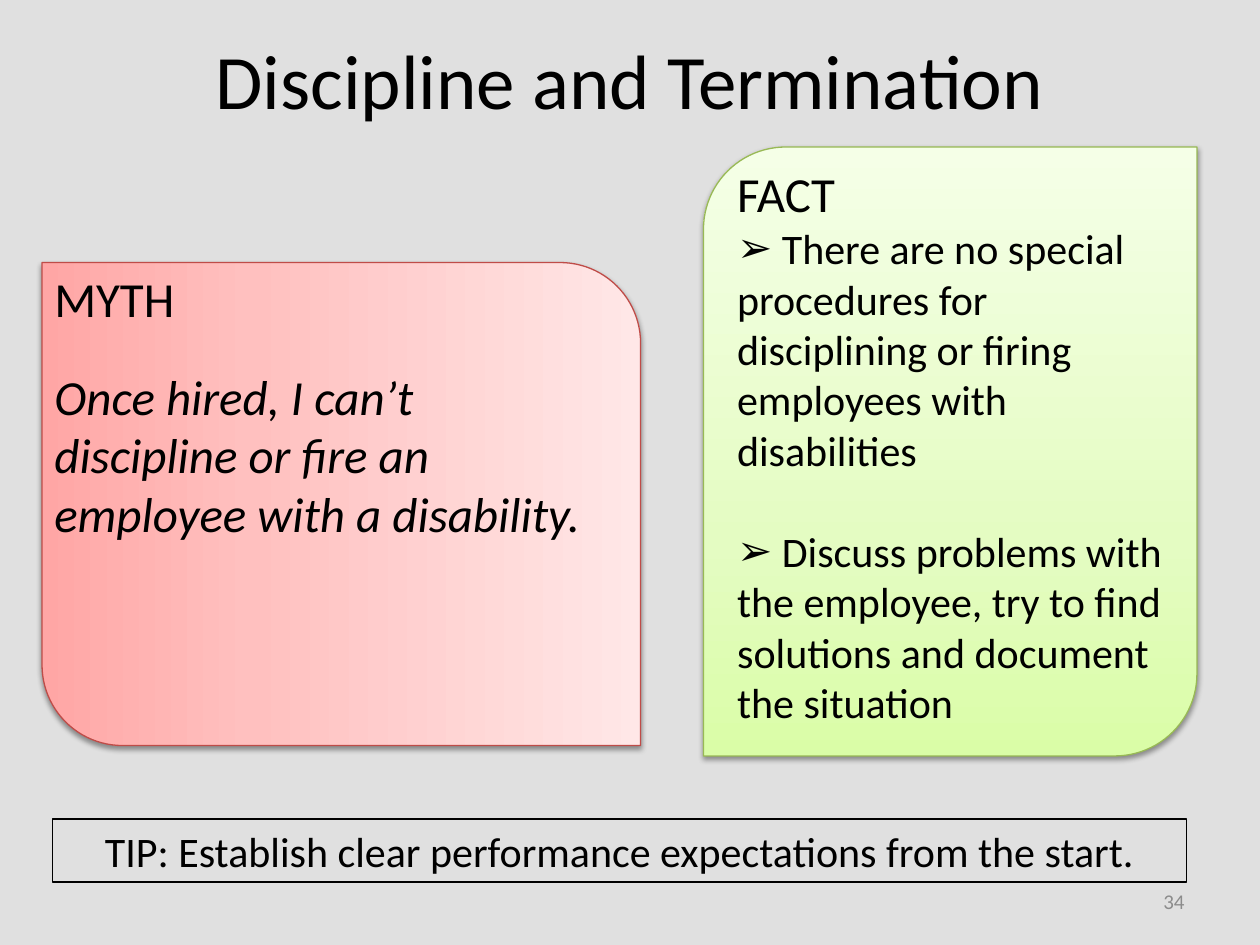
from lxml.etree import SubElement
from pptx import Presentation
from pptx.dml.color import RGBColor
from pptx.enum.shapes import MSO_SHAPE
from pptx.enum.text import MSO_ANCHOR, MSO_AUTO_SIZE, PP_ALIGN
from pptx.oxml.ns import qn
from pptx.util import Inches, Pt

LEAF = MSO_SHAPE.ROUND_2_DIAG_RECTANGLE
MID, TOP = MSO_ANCHOR.MIDDLE, MSO_ANCHOR.TOP
LEFT, CENTER, RIGHT = PP_ALIGN.LEFT, PP_ALIGN.CENTER, PP_ALIGN.RIGHT
FIXED = MSO_AUTO_SIZE.NONE
COLS, ROWS = 12, 9
FONT = "Calibri"


def color(code):
    """Turn a hex string into a colour."""
    return RGBColor.from_string(code)


class Deck:
    """Hold the style and the current slide, laid out on a 12 by 9 grid."""

    def __init__(self):
        """Open a deck with one title and body slide."""
        self.prs = Presentation()
        self.prs.slide_width, self.prs.slide_height = Inches(10), Inches(7.5)
        self.slide = self.prs.slides.add_slide(self.prs.slide_layouts[1])
        self.shapes = self.slide.shapes
        back = self.slide.background.fill
        back.solid()
        back.fore_color.rgb = color("E0E0E0")

    def area(self, x, y, w, h):
        """Turn columns and rows into slide lengths."""
        col, row = self.prs.slide_width / COLS, self.prs.slide_height / ROWS
        return round(x * col), round(y * row), round(w * col), round(h * row)

    def place(self, shape, *box):
        """Move a placeholder to a grid box and to the front."""
        shape.left, shape.top, shape.width, shape.height = self.area(*box)
        self.shapes.element.append(shape.element)
        return shape

    def label(self, shape, lines, align=LEFT, anchor=TOP, ink="000000"):
        """Fill a shape with lines of text, size, gap, italic and bullet."""
        frame = shape.text_frame
        frame.word_wrap = True
        frame.auto_size = FIXED
        frame.vertical_anchor = anchor
        frame.text = "\n".join(line[0] for line in lines)
        for para, (_, size, gap, italic, mark) in zip(frame.paragraphs, lines):
            props = para._p.get_or_add_pPr()
            props.set("marL", "0")
            props.set("indent", "0")
            para.alignment = align
            para.space_before = Pt(gap)
            if mark:
                SubElement(props, qn("a:buChar")).set("char", mark)
            else:
                SubElement(props, qn("a:buNone"))
            for run in para.runs:
                font = run.font
                font.name, font.size, font.italic = FONT, Pt(size), italic
                font.color.rgb = color(ink)

    def text(self, *box):
        """Add an empty text box."""
        return self.shapes.add_textbox(*self.area(*box))

    def leaf(self, stops, edge, *box, turn=0):
        """Add a card with two round corners, a gradient and a shadow."""
        card = self.shapes.add_shape(LEAF, *self.area(*box))
        card.rotation = turn
        card.fill.gradient()
        card.fill.gradient_angle = 90
        card.line.color.rgb = color(edge)
        card.line.width = Pt(0.75)
        card.shadow.inherit = False
        props = card.element.spPr
        ramp = props.find(".//" + qn("a:gsLst"))
        for stop in list(ramp):
            ramp.remove(stop)
        for spot, code in zip((0, 35000, 100000), stops):
            stop = SubElement(ramp, qn("a:gs"), pos=str(spot))
            SubElement(stop, qn("a:srgbClr"), val=code)
        shade = SubElement(props.find(qn("a:effectLst")), qn("a:outerShdw"),
                           blurRad=str(Pt(3.1)), dist=str(Pt(1.6)),
                           dir="5400000", rotWithShape="0")
        black = SubElement(shade, qn("a:srgbClr"), val="000000")
        SubElement(black, qn("a:alpha"), val="38000")


def main():
    """Build the slide and save it."""
    deck = Deck()
    title, body = deck.slide.placeholders
    deck.place(title, 0.6, 0, 10.8, 1.5)
    deck.label(title, [("Discipline and Termination", 44, 0, False, "")],
               CENTER, MID)

    deck.leaf(("DAFDA7", "E4FCC2", "F5FFE7"), "98B955", 6.7, 1.4, 4.7, 5.8)
    deck.leaf(("FFA6A5", "FFC0BF", "FFE7E7"), "BF4C48", 0.95, 1.95, 4.6, 5.7,
              turn=90)

    deck.label(deck.text(0.4, 2.5, 5.5, 4.44), [
        ("MYTH", 28, 0, False, ""),
        ("Once hired, I can’t discipline or fire an employee with a "
         "disability.", 28, 22, True, ""),
    ])
    deck.label(deck.place(body, 6.9, 1.5, 4.4, 5.7), [
        ("FACT", 28, 0, False, ""),
        (" There are no special procedures for disciplining or firing "
         "employees with disabilities", 24, 0, False, "➢"),
        (" Discuss problems with the employee, try to find solutions and "
         "document the situation", 24, 29, False, "➢"),
    ])

    tip = deck.text(0.5, 7.8, 10.8, 0.6)
    tip.line.color.rgb = color("000000")
    tip.line.width = Pt(0.75)
    deck.label(tip, [("TIP: Establish clear performance expectations from "
                      "the start.", 24, 0, False, "")], CENTER)
    deck.label(deck.text(8.6, 8.34, 2.8, 0.48), [("34", 12, 0, False, "")],
               RIGHT, MID, "8C8C8C")
    deck.prs.save("out.pptx")


if __name__ == "__main__":
    main()
